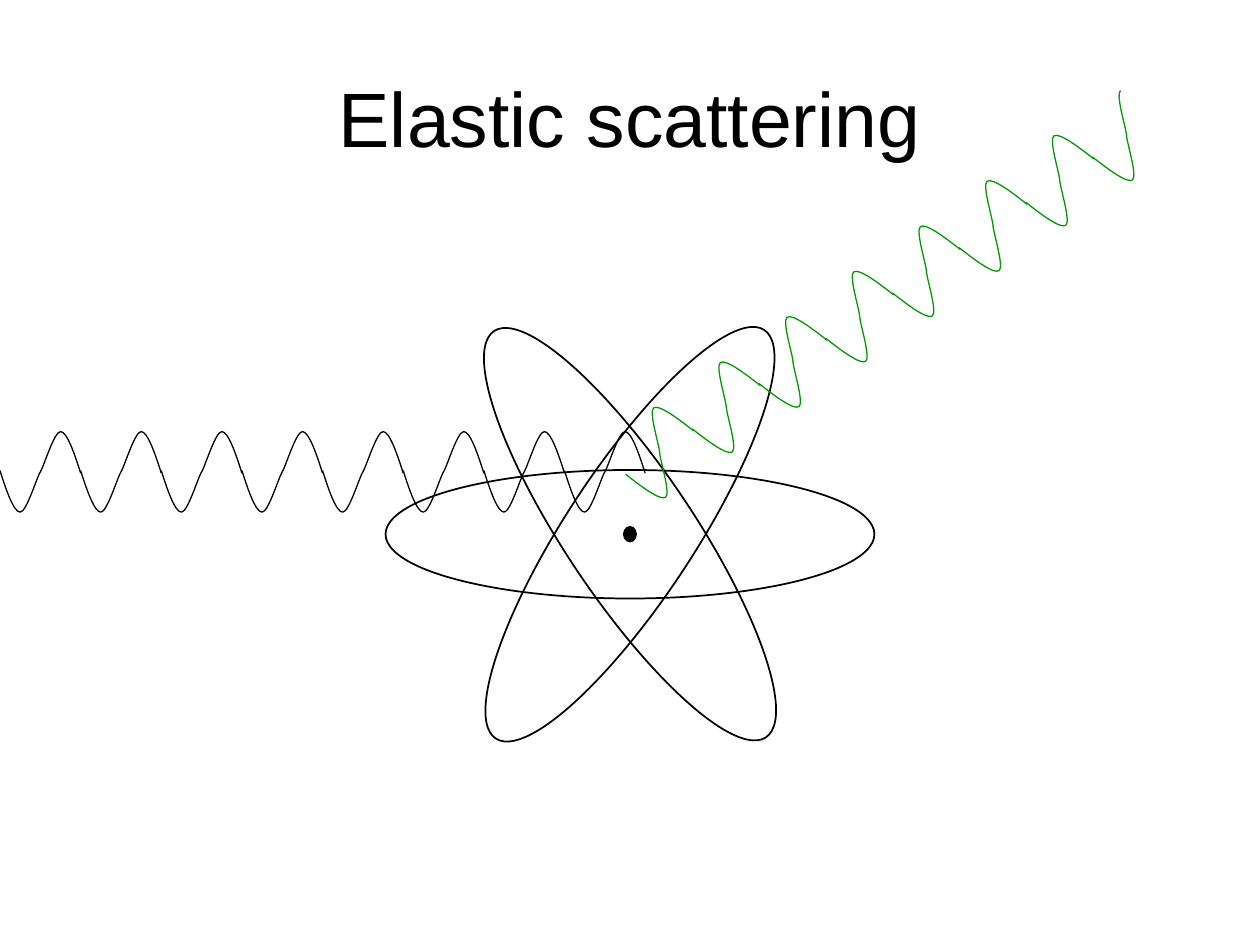
"""Build the elastic scattering slide: an atom, an incoming wave and a scattered wave."""
import math
from dataclasses import dataclass

from lxml import etree
from pptx import Presentation
from pptx import util as u
from pptx.dml.color import RGBColor
from pptx.enum import shapes, text
from pptx.oxml.ns import qn


@dataclass(frozen=True)
class Theme:
    font: str = "Arial"
    title_size: float = 44
    ink: str = "000000"
    scattered: str = "009900"
    paper: str = "FFFFFF"
    thin: float = 0.75
    orbit_line: float = 1


@dataclass(frozen=True)
class Box:
    left: float
    top: float
    width: float
    height: float
    rotation: float = 0


@dataclass(frozen=True)
class Wave:
    x: float
    y: float
    angle: float
    color: str


THEME = Theme()
CYCLES = 8
WAVELENGTH = 0.64
CREST_OFFSET = (0.32, -0.31)
HALF_WIDTH, HALF_HEIGHT = 0.32, 0.33
TROUGH = ((0, 0), (0.05, 0.16), (0.11, 0.33), (0.16, 0.33), (0.21, 0.33), (0.29, 0.06), (0.32, 0.01))
TITLE = Box(0.5, 0.3, 9, 1.25)
ORBITS = [Box(3.06, 3.73, 3.88, 1.02, rotation) for rotation in (0, 303.3, 56.2)]
NUCLEUS = Box(4.95, 4.18, 0.1, 0.12)
WAVE_END = Box(9.04, 0.13, 0.53, 1.44, 325.8)
INCOMING = Wave(0.16, 3.9, 0, THEME.ink)
OUTGOING = Wave(5.19, 3.81, -34.2, THEME.scattered)


def write_text(shape, content: str, *, size: float, color: str, align, anchor) -> None:
    """Put one formatted paragraph in a shape."""
    frame = shape.text_frame
    frame.text = content
    frame.word_wrap = True
    frame.vertical_anchor = anchor
    paragraph = frame.paragraphs[0]
    paragraph.alignment = align
    paragraph.font.name = THEME.font
    paragraph.font.size = u.Pt(size)
    paragraph.font.color.rgb = RGBColor.from_string(color)


def style(shape, *, fill: str | None = None, line: str | None = None, width: float = THEME.thin) -> None:
    """Set the fill and outline of a shape and remove its shadow."""
    shape.shadow.inherit = False
    if fill:
        shape.fill.solid()
        shape.fill.fore_color.rgb = RGBColor.from_string(fill)
    else:
        shape.fill.background()
    if line:
        shape.line.color.rgb = RGBColor.from_string(line)
        shape.line.width = u.Pt(width)
    else:
        shape.line.fill.background()


def add_preset(parent, kind, box: Box, **look) -> None:
    """Draw a styled preset shape."""
    lengths = (u.Inches(value) for value in (box.left, box.top, box.width, box.height))
    shape = parent.add_shape(kind, *lengths)
    shape.rotation = box.rotation
    style(shape, **look)


def rotate(x: float, y: float, degrees: float) -> tuple[float, float]:
    """Turn a vector clockwise on the slide."""
    cosine, sine = math.cos(math.radians(degrees)), math.sin(math.radians(degrees))
    return x * cosine - y * sine, x * sine + y * cosine


def smooth_outline(shape) -> None:
    """Turn every three line segments of a freeform into one cubic curve."""
    segments = list(shape.element.iter(qn("a:lnTo")))
    outline = segments[0].getparent()
    for start in range(0, len(segments), 3):
        curve = etree.SubElement(outline, qn("a:cubicBezTo"))
        for segment in segments[start:start + 3]:
            curve.append(segment[0])
            outline.remove(segment)


def add_half_wave(parent, center_x: float, center_y: float, rotation: float, color: str) -> None:
    """Draw one trough, or a crest when it is turned by half a circle."""
    left, top = center_x - HALF_WIDTH / 2, center_y - HALF_HEIGHT / 2
    points = [(u.Inches(left + x), u.Inches(top + y)) for x, y in TROUGH]
    builder = parent.build_freeform(*points[0])
    builder.add_line_segments(points[1:], close=False)
    shape = builder.convert_to_shape()
    smooth_outline(shape)
    shape.rotation = rotation % 360
    style(shape, line=color)


def add_wave(slide, wave: Wave):
    """Draw a wave as a group of alternating troughs and crests."""
    group = slide.shapes.add_group_shape()
    for cycle in range(CYCLES):
        for offset_x, offset_y, turn in ((0, 0, 0), (*CREST_OFFSET, 180)):
            x, y = rotate(cycle * WAVELENGTH + offset_x, offset_y, wave.angle)
            add_half_wave(group.shapes, wave.x + x, wave.y + y, wave.angle + turn, wave.color)
    return group


def main() -> None:
    """Build and save the slide."""
    presentation = Presentation()
    presentation.slide_width, presentation.slide_height = u.Inches(10), u.Inches(7.5)
    slide = presentation.slides.add_slide(presentation.slide_layouts[5])

    add_wave(slide, INCOMING)
    title = slide.shapes.title
    title.left, title.top = u.Inches(TITLE.left), u.Inches(TITLE.top)
    title.width, title.height = u.Inches(TITLE.width), u.Inches(TITLE.height)
    write_text(title, "Elastic scattering", size=THEME.title_size, color=THEME.ink,
               align=text.PP_ALIGN.CENTER, anchor=text.MSO_ANCHOR.MIDDLE)

    for orbit in ORBITS:
        add_preset(slide.shapes, shapes.MSO_SHAPE.OVAL, orbit, line=THEME.ink, width=THEME.orbit_line)
    add_preset(slide.shapes, shapes.MSO_SHAPE.OVAL, NUCLEUS, fill=THEME.ink, line=THEME.ink)

    scattered = add_wave(slide, OUTGOING)
    add_preset(scattered.shapes, shapes.MSO_SHAPE.RECTANGLE, WAVE_END, fill=THEME.paper)
    presentation.save("out.pptx")


if __name__ == "__main__":
    main()
